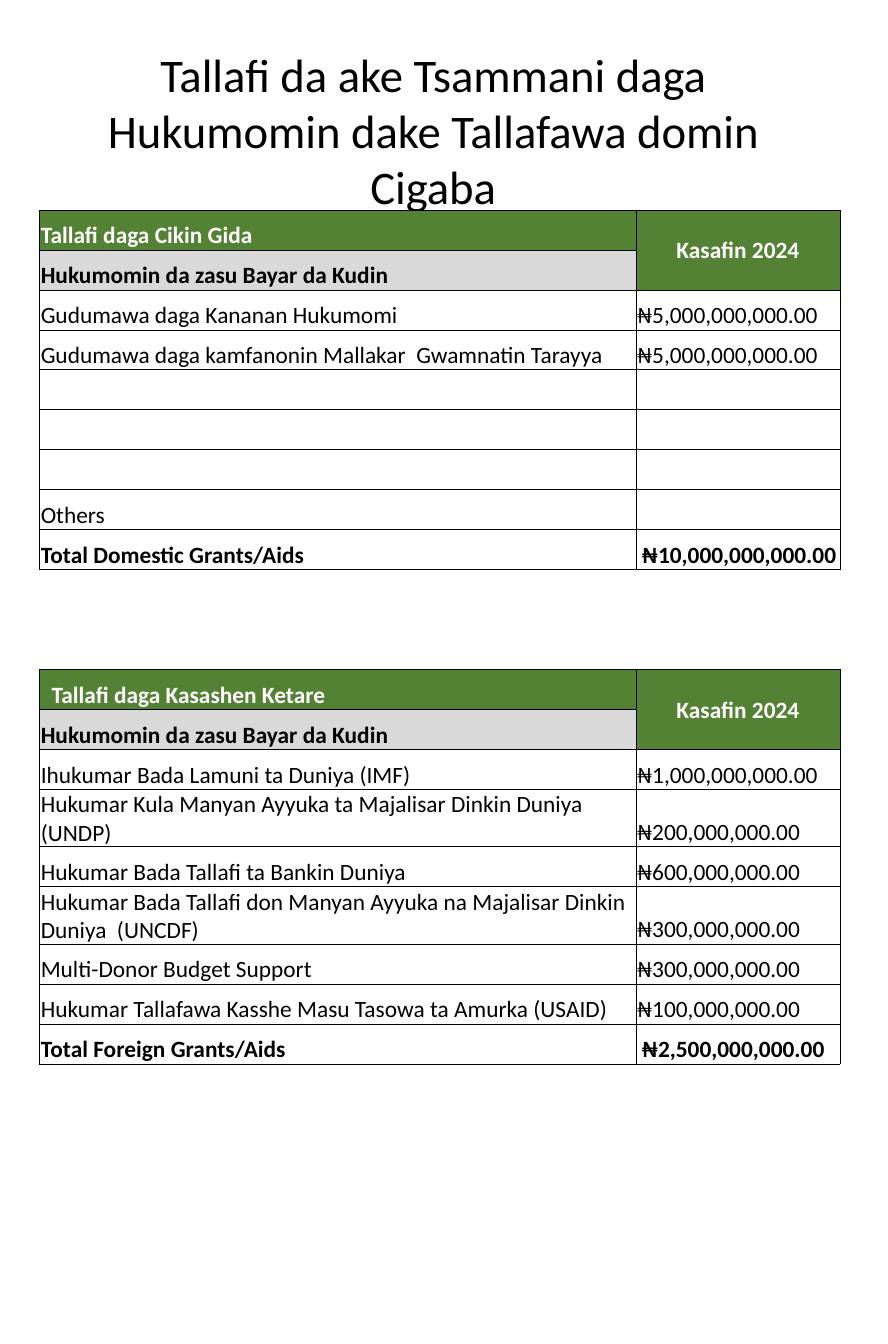
"""Build the slide of expected grants and aids."""
from dataclasses import dataclass

from lxml import etree
from pptx import Presentation
from pptx.dml.color import RGBColor
from pptx.enum.text import MSO_ANCHOR, MSO_AUTO_SIZE, PP_ALIGN
from pptx.oxml.ns import qn
from pptx.slide import Slide
from pptx.table import _Cell
from pptx.text.text import Font
from pptx.util import Inches, Pt

TOP, MIDDLE, BOTTOM = MSO_ANCHOR.TOP, MSO_ANCHOR.MIDDLE, MSO_ANCHOR.BOTTOM
LEFT, CENTER = PP_ALIGN.LEFT, PP_ALIGN.CENTER
GROW = MSO_AUTO_SIZE.SHAPE_TO_FIT_TEXT
BLACK, WHITE, GREEN, GREY = "000000", "FFFFFF", "548235", "D9D9D9"
FACE = "Calibri"
PAD = 0.01
WIDTHS = (4.97, 1.7)
YEAR = "Kasafin 2024"
PAYERS = "Hukumomin da zasu Bayar da Kudin"


@dataclass
class Grant:
    """One table of grants with its heading, lines and total."""

    top: float
    head: str
    indent: float
    lines: list[tuple[str, str]]
    total: tuple[str, str]


@dataclass
class Look:
    """The format of a cell."""

    ink: str = BLACK
    fill: str = ""
    bold: bool = False
    align: PP_ALIGN = LEFT
    anchor: MSO_ANCHOR = BOTTOM
    indent: float = PAD


HEAD = Look(WHITE, GREEN, True, CENTER, MIDDLE)
SUB = Look(fill=GREY, bold=True)
PLAIN = Look()
TOTAL = Look(bold=True)
SUM = Look(bold=True, indent=0.05)

GRANTS = [
    Grant(5.58, "Tallafi daga Kasashen Ketare", 0.1, [
        ("Ihukumar Bada Lamuni ta Duniya (IMF)", "₦1,000,000,000.00"),
        ("Hukumar Kula Manyan Ayyuka ta Majalisar Dinkin Duniya (UNDP)",
         "₦200,000,000.00"),
        ("Hukumar Bada Tallafi ta Bankin Duniya", "₦600,000,000.00"),
        ("Hukumar Bada Tallafi don Manyan Ayyuka na Majalisar Dinkin "
         "Duniya  (UNCDF)", "₦300,000,000.00"),
        ("Multi-Donor Budget Support", "₦300,000,000.00"),
        ("Hukumar Tallafawa Kasshe Masu Tasowa ta Amurka (USAID)",
         "₦100,000,000.00"),
    ], ("Total Foreign Grants/Aids", "₦2,500,000,000.00")),
    Grant(1.75, "Tallafi daga Cikin Gida", PAD, [
        ("Gudumawa daga Kananan Hukumomi", "₦5,000,000,000.00"),
        ("Gudumawa daga kamfanonin Mallakar  Gwamnatin Tarayya",
         "₦5,000,000,000.00"),
        *[("", "")] * 3,
        ("Others", ""),
    ], ("Total Domestic Grants/Aids", "₦10,000,000,000.00")),
]


def color(code: str) -> RGBColor:
    """Turn a hex string into a colour."""
    return RGBColor.from_string(code)


def style(font: Font, size: float, ink: str, bold: bool = False) -> None:
    """Set the face, size, colour and weight of a font."""
    font.name, font.size, font.bold = FACE, Pt(size), bold
    font.color.rgb = color(ink)


def border(cell: _Cell) -> None:
    """Draw a thin black line on each side of a cell."""
    props = cell._tc.get_or_add_tcPr()
    for side in ("a:lnL", "a:lnR", "a:lnT", "a:lnB"):
        line = etree.SubElement(props, qn(side), w=str(Pt(0.5)))
        fill = etree.SubElement(line, qn("a:solidFill"))
        etree.SubElement(fill, qn("a:srgbClr"), val=BLACK)


def write(cell: _Cell, text: str, look: Look) -> None:
    """Fill a cell with text in the given look."""
    border(cell)
    if look.fill:
        cell.fill.solid()
        cell.fill.fore_color.rgb = color(look.fill)
    else:
        cell.fill.background()
    cell.margin_left = Inches(look.indent)
    cell.margin_top = cell.margin_right = Inches(PAD)
    cell.margin_bottom = 0
    cell.vertical_anchor = look.anchor
    cell.text_frame.text = text
    para = cell.text_frame.paragraphs[0]
    para.alignment = look.align
    for run in para.runs:
        style(run.font, 14, look.ink, look.bold)


def draw(slide: Slide, grant: Grant) -> None:
    """Add the table of one kind of grant."""
    label = Look(WHITE, GREEN, True, indent=grant.indent)
    rows = [
        ((grant.head, label), (YEAR, HEAD)),
        ((PAYERS, SUB), ("", HEAD)),
        *[((name, PLAIN), (money, PLAIN)) for name, money in grant.lines],
        ((grant.total[0], TOTAL), (grant.total[1], SUM)),
    ]
    table = slide.shapes.add_table(
        len(rows), len(WIDTHS), Inches(0.33), Inches(grant.top),
        Inches(sum(WIDTHS)), Inches(3)).table
    table.first_row = table.horz_banding = False
    for col, width in zip(table.columns, WIDTHS):
        col.width = Inches(width)
    for r, row in enumerate(rows):
        for c, (text, look) in enumerate(row):
            write(table.cell(r, c), text, look)
    table.cell(0, 1).merge(table.cell(1, 1))


def entitle(slide: Slide) -> None:
    """Place and format the title."""
    title = slide.shapes.title
    title.left, title.top = Inches(0.56), Inches(0.33)
    title.width, title.height = Inches(6.1), Inches(1.51)
    frame = title.text_frame
    frame.text = ("Tallafi da ake Tsammani daga Hukumomin dake Tallafawa "
                  "domin Cigaba")
    frame.word_wrap, frame.auto_size = True, GROW
    frame.vertical_anchor = TOP
    para = frame.paragraphs[0]
    para.alignment = CENTER
    style(para.runs[0].font, 28, BLACK)


def main() -> None:
    """Build and save the deck."""
    deck = Presentation()
    deck.slide_width, deck.slide_height = Inches(7.4), Inches(11.2)
    slide = deck.slides.add_slide(deck.slide_layouts[5])
    entitle(slide)
    for grant in GRANTS:
        draw(slide, grant)
    deck.save("out.pptx")


if __name__ == "__main__":
    main()
